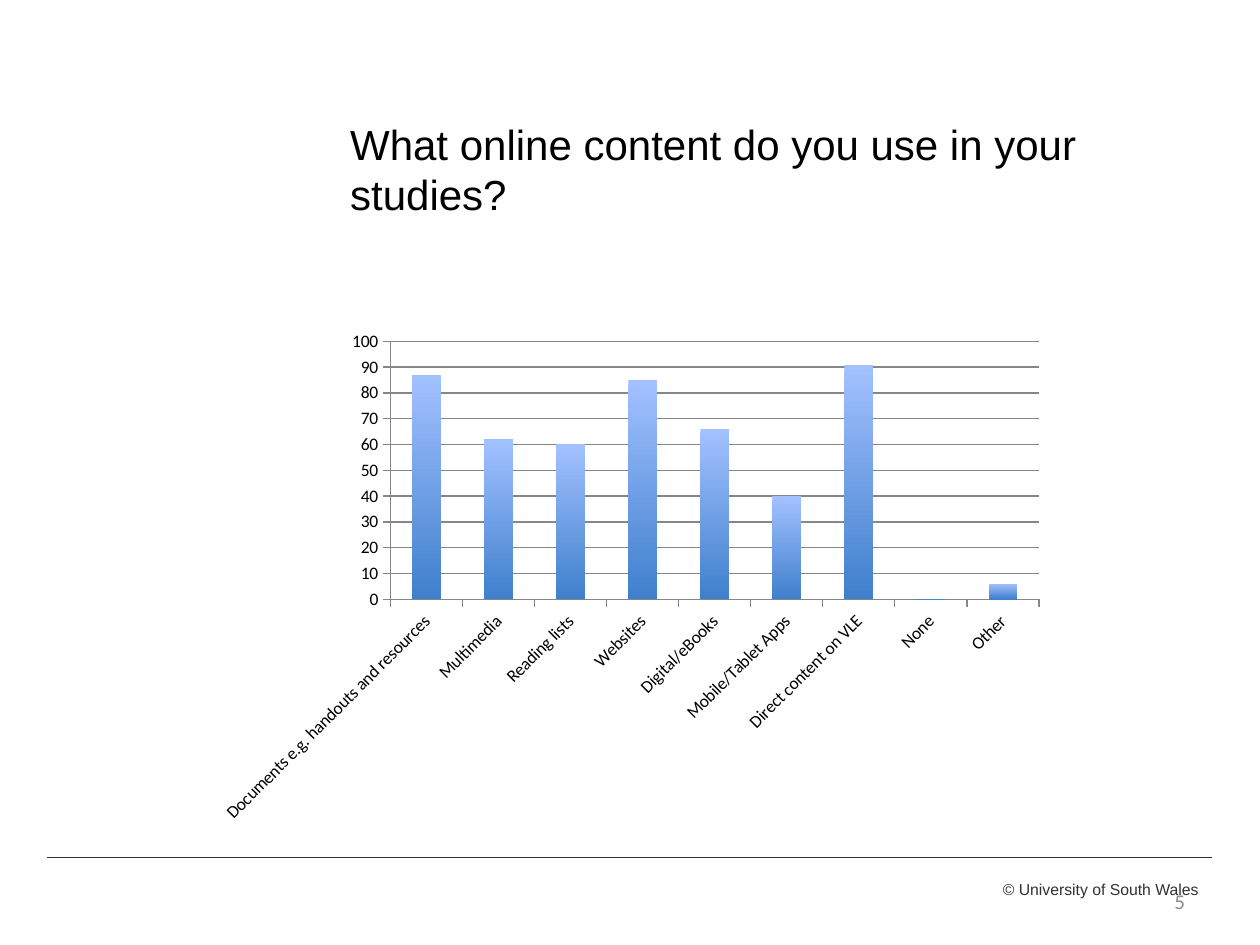
from dataclasses import dataclass

from lxml.etree import SubElement
from pptx import Presentation
from pptx.chart.data import CategoryChartData
from pptx.dml.color import RGBColor
from pptx.enum.chart import XL_CHART_TYPE as ChartType, XL_TICK_MARK as TickMark
from pptx.enum.shapes import MSO_CONNECTOR as Connector
from pptx.enum.text import MSO_ANCHOR as Anchor, PP_ALIGN as Align
from pptx.oxml.ns import qn
from pptx.util import Pt


@dataclass(frozen=True)
class Theme:
    heading_font: str = "Arial"
    chart_font: str = "Calibri"
    text: str = "000000"
    footer: str = "313133"
    number: str = "8C8C8C"
    grid: str = "868686"
    bar_top: str = "A3C1FF"
    bar_bottom: str = "3F80CD"
    title_size: int = 24
    number_size: int = 12
    chart_size: int = 10
    footer_size: int = 9


THEME = Theme()

CONTENT_USE = {
    "Documents e.g. handouts and resources": 87,
    "Multimedia": 62,
    "Reading lists": 60,
    "Websites": 85,
    "Digital/eBooks": 66,
    "Mobile/Tablet Apps": 40,
    "Direct content on VLE": 91,
    "None": 0,
    "Other": 6,
}


def color(value):
    return RGBColor.from_string(value)


def style_font(font, name, size, value):
    font.name = name
    font.size = Pt(size)
    font.color.rgb = color(value)


def add_text(slide, box, text, name, size, value,
             align=Align.LEFT, anchor=Anchor.TOP, wrap=True):
    shape = slide.shapes.add_textbox(*map(Pt, box))
    frame = shape.text_frame
    frame.word_wrap = wrap
    frame.vertical_anchor = anchor
    paragraph = frame.paragraphs[0]
    paragraph.text = text
    paragraph.alignment = align
    style_font(paragraph.font, name, size, value)


def add_title(slide, box):
    add_text(slide, box, "What online content do you use in your studies?",
             THEME.heading_font, THEME.title_size, THEME.text)


def add_footer(slide, box):
    left, top, width, height = box
    # Rule above the footer
    rule = slide.shapes.add_connector(
        Connector.STRAIGHT, Pt(left), Pt(top), Pt(left + width), Pt(top))
    rule.line.color.rgb = color(THEME.footer)
    rule.line.width = Pt(0.25)
    SubElement(rule._element.spPr, qn("a:effectLst"))
    # Copyright line and slide number, both set from the right
    right = left + width
    add_text(slide, (right - 128, top + 9.4, 127.4, 18),
             "© University of South Wales", THEME.heading_font,
             THEME.footer_size, THEME.footer, Align.RIGHT, wrap=False)
    add_text(slide, (right - 176.4, top + 10.8, 168, height - 10.8), "5",
             THEME.chart_font, THEME.number_size, THEME.number,
             Align.RIGHT, Anchor.MIDDLE)


def add_usage_chart(slide, box):
    data = CategoryChartData()
    data.categories = list(CONTENT_USE)
    data.add_series("Series 1", list(CONTENT_USE.values()))
    chart = slide.shapes.add_chart(
        ChartType.COLUMN_CLUSTERED, *map(Pt, box), data).chart
    chart.has_legend = False
    chart.has_title = False
    style_font(chart.font, THEME.chart_font, THEME.chart_size, THEME.text)

    # Axes
    category_axis, value_axis = chart.category_axis, chart.value_axis
    value_axis.minimum_scale = 0
    value_axis.maximum_scale = 100
    value_axis.major_unit = 10
    value_axis.has_major_gridlines = True
    for axis in (category_axis, value_axis):
        axis.major_tick_mark = TickMark.OUTSIDE
        style_font(axis.tick_labels.font, THEME.chart_font,
                   THEME.chart_size, THEME.text)
    for line in (category_axis.format.line, value_axis.format.line,
                 value_axis.major_gridlines.format.line):
        line.color.rgb = color(THEME.grid)
        line.width = Pt(0.75)
    label_body = category_axis._element.find(qn("c:txPr")).find(qn("a:bodyPr"))
    label_body.set("rot", "-2700000")
    label_body.set("vert", "horz")

    # Bars
    plot = chart.plots[0]
    plot.gap_width = 150
    plot.vary_by_categories = False
    fill = plot.series[0].format.fill
    fill.gradient()
    fill.gradient_angle = 270
    for stop, value in zip(fill.gradient_stops,
                           (THEME.bar_top, THEME.bar_bottom)):
        stop.color.rgb = color(value)


def main():
    presentation = Presentation()
    presentation.slide_width = Pt(720)
    presentation.slide_height = Pt(540)
    slide = presentation.slides.add_slide(presentation.slide_layouts[6])
    add_footer(slide, (26.8, 489.6, 665.8, 39.6))
    add_title(slide, (193, 64, 461.5, 94.3))
    add_usage_chart(slide, (117.4, 183.6, 486, 292.3))
    presentation.save("out.pptx")


if __name__ == "__main__":
    main()
